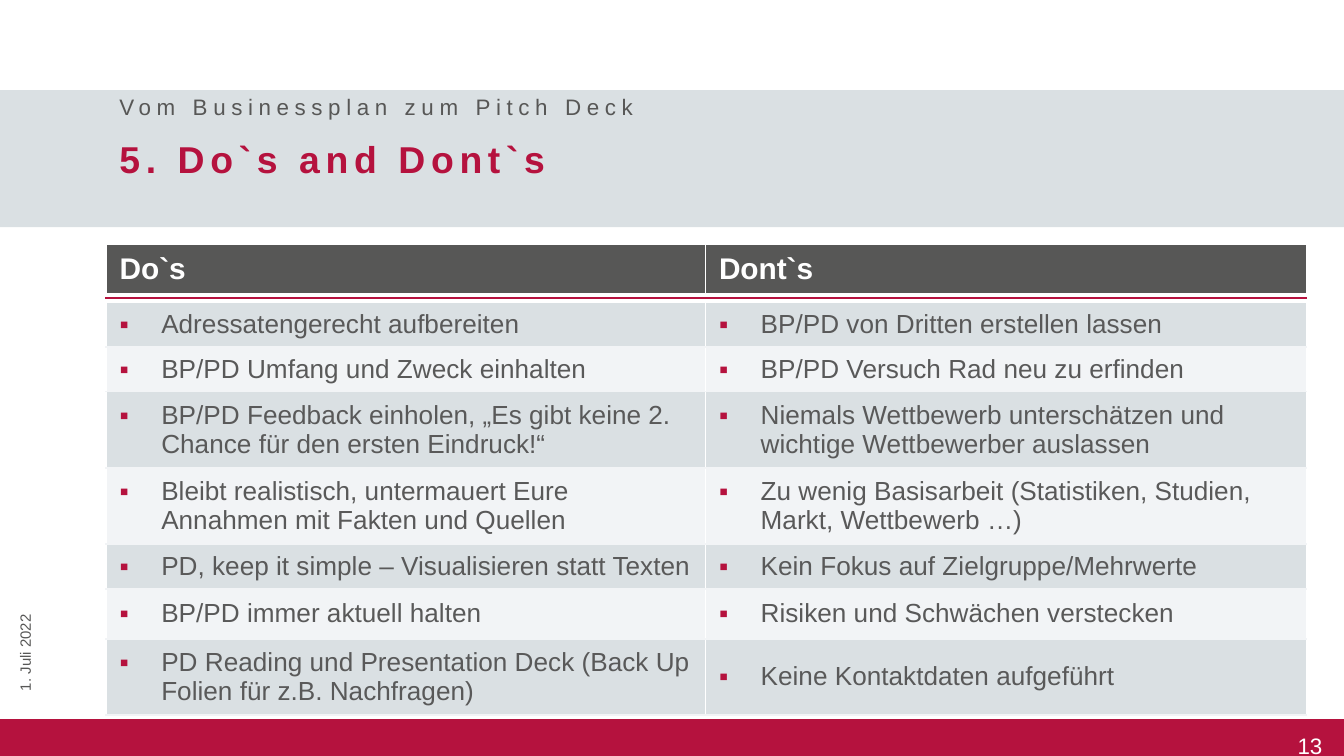
import pptx
import pptx.dml.color
import pptx.enum.shapes
import pptx.enum.text
import pptx.oxml
import pptx.oxml.ns
import pptx.util
from pptx.util import Inches

CRIMSON, DARK, BODY = "B5123E", "575756", "595959"
BAND, LIGHT, WHITE = "DAE0E3", "F2F4F6", "FFFFFF"
MIDDLE = pptx.enum.text.MSO_ANCHOR.MIDDLE
TOP = pptx.enum.text.MSO_ANCHOR.TOP

HEADINGS = ("Do`s", "Dont`s")
ADVICE = [  # row height, do, don't
    (0.32, "Adressatengerecht aufbereiten", "BP/PD von Dritten erstellen lassen"),
    (0.33, "BP/PD Umfang und Zweck einhalten", "BP/PD Versuch Rad neu zu erfinden"),
    (0.53, "BP/PD Feedback einholen, „Es gibt keine 2. Chance für den ersten Eindruck!“",
     "Niemals Wettbewerb unterschätzen und wichtige Wettbewerber auslassen"),
    (0.56, "Bleibt realistisch, untermauert Eure Annahmen mit Fakten und Quellen",
     "Zu wenig Basisarbeit (Statistiken, Studien, Markt, Wettbewerb …)"),
    (0.31, "PD, keep it simple – Visualisieren statt Texten",
     "Kein Fokus auf Zielgruppe/Mehrwerte"),
    (0.37, "BP/PD immer aktuell halten", "Risiken und Schwächen verstecken"),
    (0.55, "PD Reading und Presentation Deck (Back Up Folien für z.B. Nachfragen)",
     "Keine Kontaktdaten aufgeführt"),
]


def rgb(value):
    return pptx.dml.color.RGBColor.from_string(value)


def element(xml):
    return pptx.oxml.parse_xml(xml.replace(" ", f" {pptx.oxml.ns.nsdecls('a')} ", 1))


def add_run(paragraph, text, size, color, bold=False, spacing=0):
    run = paragraph.add_run()
    run.text = text
    run.font.name = "Arial"
    run.font.size = pptx.util.Pt(size)
    run.font.bold = bold
    run.font.color.rgb = rgb(color)
    if spacing:
        run.font._element.set("spc", str(spacing * 100))


def add_band(slide, top, height, color):
    band = slide.shapes.add_shape(pptx.enum.shapes.MSO_SHAPE.RECTANGLE,
                                  0, Inches(top), Inches(10), Inches(height))
    band.shadow.inherit = False
    band.fill.solid()
    band.fill.fore_color.rgb = rgb(color)
    band.line.fill.background()


def add_text(slide, box, text, size, color, anchor=MIDDLE, **style):
    label = slide.shapes.add_textbox(*map(Inches, box))
    frame = label.text_frame
    frame.word_wrap = True
    frame.vertical_anchor = anchor
    add_run(frame.paragraphs[0], text, size, color, **style)
    return label


def style_cell(cell, color=None, **borders):
    """Set borders by side (L, R, T, B) and the fill, in schema order."""
    cell.vertical_anchor = MIDDLE
    properties = cell._tc.get_or_add_tcPr()
    for side in "LRTB":
        if side in borders:
            properties.append(element(
                f'<a:ln{side} w="12700"><a:solidFill>'
                f'<a:srgbClr val="{borders[side]}"/></a:solidFill></a:ln{side}>'))
    if color:
        cell.fill.solid()
        cell.fill.fore_color.rgb = rgb(color)
    else:
        cell.fill.background()


def add_bullet(paragraph):
    properties = paragraph._p.get_or_add_pPr()
    properties.set("marL", str(Inches(0.31)))
    properties.set("indent", str(-Inches(0.31)))
    properties.append(element(f'<a:buClr ><a:srgbClr val="{CRIMSON}"/></a:buClr>'))
    properties.append(element('<a:buFont typeface="Arial"/>'))
    properties.append(element('<a:buChar char="▪"/>'))


def style_spacer(cell, **borders):
    cell.margin_top = cell.margin_bottom = 0
    cell.text_frame.paragraphs[0]._p.append(element('<a:endParaRPr sz="100"/>'))
    style_cell(cell, **borders)


def add_advice_table(slide):
    heights = [0.36, 0.03, 0.03] + [row[0] for row in ADVICE]
    table = slide.shapes.add_table(len(heights), 2, Inches(0.79), Inches(1.82),
                                   Inches(8.93), Inches(sum(heights))).table
    table.first_row = table.horz_banding = False
    for row, height in zip(table.rows, heights):
        row.height = Inches(height)

    for column, (width, heading) in enumerate(zip((4.46, 4.47), HEADINGS)):
        table.columns[column].width = Inches(width)
        divider = {"L" if column else "R": WHITE}

        # Heading and the double row carrying the red rule
        header = table.cell(0, column)
        style_cell(header, DARK, **divider)
        add_run(header.text_frame.paragraphs[0], heading, 16, WHITE, bold=True)
        style_spacer(table.cell(1, column), B=CRIMSON)
        style_spacer(table.cell(2, column), T=CRIMSON)

        # Bulleted advice on alternating bands
        for index, row in enumerate(ADVICE):
            cell = table.cell(index + 3, column)
            edges = {"B": LIGHT, **({"T": LIGHT} if index else {})}
            style_cell(cell, LIGHT if index % 2 else BAND, **divider, **edges)
            paragraph = cell.text_frame.paragraphs[0]
            add_bullet(paragraph)
            add_run(paragraph, row[column + 1], 14, BODY)


def main():
    deck = pptx.Presentation()
    deck.slide_width = Inches(10)
    deck.slide_height = deck.slide_width * 9 // 16
    slide = deck.slides.add_slide(deck.slide_layouts[6])

    # Footer with page number
    add_band(slide, 5.35, 0.28, CRIMSON)
    page_number = add_text(slide, (8.58, 5.26, 1.26, 0.39), "13", 12, WHITE)
    frame = page_number.text_frame
    frame.margin_left = frame.margin_right = frame.margin_top = frame.margin_bottom = 0
    frame.paragraphs[0].alignment = pptx.enum.text.PP_ALIGN.RIGHT
    frame.paragraphs[0].line_spacing = pptx.util.Pt(28)

    # Heading band
    add_band(slide, 0.67, 1.02, BAND)
    add_text(slide, (0.79, 0.96, 9.21, 0.44), "5. Do`s and Dont`s", 20, CRIMSON,
             bold=True, spacing=3)
    add_text(slide, (0.79, 0.72, 9.21, 0.15), "Vom Businessplan zum Pitch Deck", 12, DARK,
             spacing=3)

    add_advice_table(slide)

    # Date along the left edge
    date = add_text(slide, (-0.42, 4.51, 1.22, 0.24), "1. Juli 2022", 8, DARK, anchor=TOP)
    date.rotation = 270

    deck.save("out.pptx")


if __name__ == "__main__":
    main()
